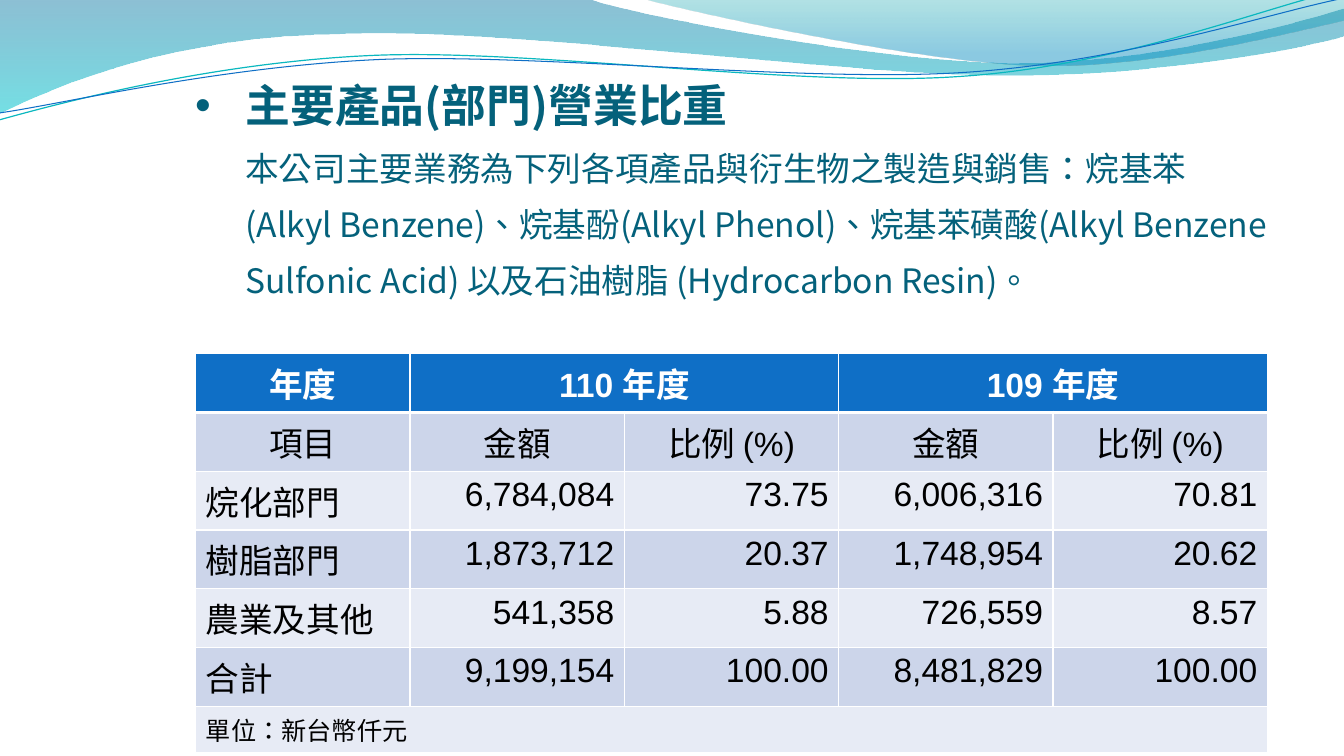
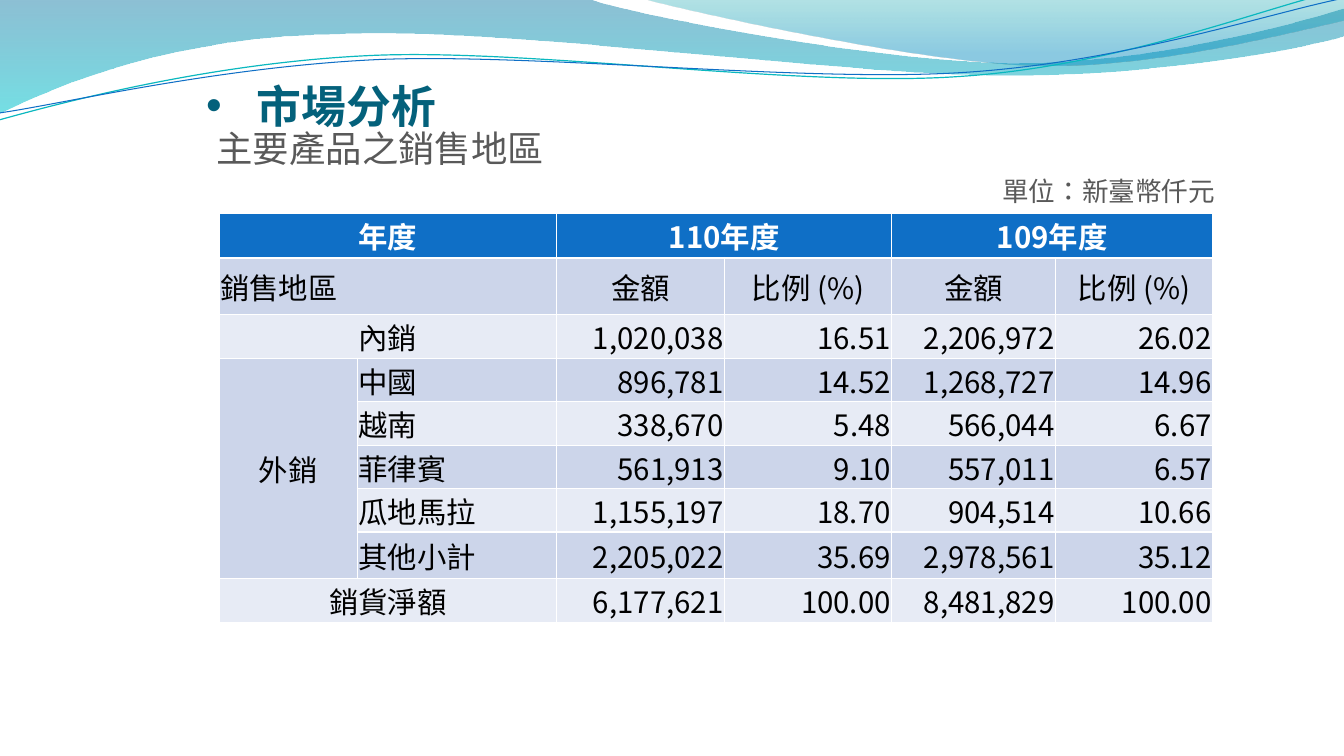
from lxml import etree
from pptx import Presentation
from pptx.dml.color import RGBColor
from pptx.enum.text import MSO_ANCHOR, PP_ALIGN
from pptx.oxml.ns import qn
from pptx.util import Pt

LEFT, CENTER, RIGHT = PP_ALIGN.LEFT, PP_ALIGN.CENTER, PP_ALIGN.RIGHT
TOP, MIDDLE = MSO_ANCHOR.TOP, MSO_ANCHOR.MIDDLE

COLORS = {
    "title": "04617B", "body": "595959", "black": "000000", "white": "FFFFFF",
    "header": "0F6FC6", "band_dark": "CCD5EA", "band_light": "E7EBF5",
    "wave_blue": "0074A1", "wave_cyan": "00C6CF",
    "crest_teal": "00A1A9", "crest_blue": "008BBF",
    "line_teal": "0AB8BF", "line_blue": "0F6FC6",
}
CJK = "Noto Sans CJK SC"
INCH = 72
CENTERED_LABELS = {"項目", "金額", "比例 (%)", "內銷", "外銷", "銷貨淨額"}

WAVE = [
    (0, 0), (5.87, 0),
    (6.34, 0.17, 8.85, 0.63, 10.11, 0.63), (11.38, 0.63, 12.78, 0.26, 13.33, 0.09),
    (13.35, 0.36),
    (13.11, 0.44, 11.6, 0.76, 9.94, 0.75), (8.29, 0.75, 5.09, 0.28, 3.43, 0.34),
    (1.72, 0.36, 0.61, 0.83, -0.01, 1.13),
]
CREST = [
    (6.39, 0),
    (6.79, 0.11, 9.09, 0.62, 10.25, 0.65), (11.41, 0.69, 12.82, 0.32, 13.33, 0.21),
    (13.33, 0),
]
TEAL_LINE = [
    (-0.01, 1.19), (0.64, 1.01, 2.11, 0.62, 3.69, 0.55),
    (5.27, 0.48, 7.9, 0.87, 9.5, 0.76), (11.1, 0.66, 12.52, 0.08, 13.31, -0.1),
]
BLUE_LINE = [
    (0, 1.12), (0.63, 1.03, 2.18, 0.66, 3.78, 0.59),
    (5.37, 0.53, 7.96, 0.82, 9.55, 0.72), (11.15, 0.62, 12.55, 0.14, 13.34, -0.02),
]

PRODUCT_ROWS = [
    ["年度", "110 年度", None, "109 年度", None],
    ["項目", "金額", "比例 (%)", "金額", "比例 (%)"],
    ["烷化部門", "6,784,084", "73.75", "6,006,316", "70.81"],
    ["樹脂部門", "1,873,712", "20.37", "1,748,954", "20.62"],
    ["農業及其他", "541,358", "5.88", "726,559", "8.57"],
    ["合計", "9,199,154", "100.00", "8,481,829", "100.00"],
    ["單位：新台幣仟元", None, None, None, None],
]
REGION_ROWS = [
    ["年度", None, "110年度", None, "109年度", None],
    ["銷售地區", None, "金額", "比例 (%)", "金額", "比例 (%)"],
    ["內銷", None, "1,020,038", "16.51", "2,206,972", "26.02"],
    ["外銷", "中國", "896,781", "14.52", "1,268,727", "14.96"],
    [None, "越南", "338,670", "5.48", "566,044", "6.67"],
    [None, "菲律賓", "561,913", "9.10", "557,011", "6.57"],
    [None, "瓜地馬拉", "1,155,197", "18.70", "904,514", "10.66"],
    [None, "其他小計", "2,205,022", "35.69", "2,978,561", "35.12"],
    ["銷貨淨額", None, "6,177,621", "100.00", "8,481,829", "100.00"],
]


def rgb(name):
    return RGBColor.from_string(COLORS[name])


def to_points(numbers):
    return [(Pt(x * INCH), Pt(y * INCH)) for x, y in zip(numbers[::2], numbers[1::2])]


def add_outline(slide, segments, close):
    start, *anchors = [to_points(segment)[-1] for segment in segments]
    builder = slide.shapes.build_freeform(*start)
    builder.add_line_segments(anchors, close=False)
    outline = builder.convert_to_shape()
    outline.shadow.inherit = False
    drawing = next(outline.element.iter(qn("a:path")))
    for straight, segment in zip(drawing.findall(qn("a:lnTo")), segments[1:]):
        if len(segment) == 6:
            curve = etree.Element(qn("a:cubicBezTo"))
            for x, y in to_points(segment):
                etree.SubElement(curve, qn("a:pt"), x=str(x - outline.left),
                                 y=str(y - outline.top))
            drawing.replace(straight, curve)
    if close:
        etree.SubElement(drawing, qn("a:close"))
    return outline


def add_wave(slide, segments, stops):
    wave = add_outline(slide, segments, True)
    wave.line.fill.background()
    wave.fill.gradient()
    wave.fill.gradient_angle = 270
    for stop, (position, color, _) in zip(wave.fill.gradient_stops, stops):
        stop.position = position
        stop.color.rgb = rgb(color)
    for node, (_, _, opacity) in zip(wave.element.spPr.iter(qn("a:srgbClr")), stops):
        etree.SubElement(node, qn("a:alpha"), val=str(opacity * 1000))


def add_curve(slide, segments, color, width):
    curve = add_outline(slide, segments, False)
    curve.fill.background()
    curve.line.color.rgb = rgb(color)
    curve.line.width = Pt(width)


def add_page(deck):
    slide = deck.slides.add_slide(deck.slide_layouts[6])
    add_wave(slide, WAVE, [(0, "wave_blue", 45), (1, "wave_cyan", 55)])
    add_wave(slide, CREST, [(0, "crest_teal", 30), (0.8, "crest_blue", 45)])
    add_curve(slide, TEAL_LINE, "line_teal", 0.85)
    add_curve(slide, BLUE_LINE, "line_blue", 0.75)
    return slide


def add_run(paragraph, text, size, color, bold=False, font=CJK):
    run = paragraph.add_run()
    run.text = text
    run.font.size = Pt(size)
    run.font.bold = bold
    run.font.color.rgb = rgb(color)
    run.font.name = font
    properties = run._r.get_or_add_rPr()
    properties.set("lang", "en-US")
    properties.set("altLang", "zh-TW")
    if any(mark in text for mark in "：、。"):
        properties.set("lang", "zh-TW")
    etree.SubElement(properties, qn("a:ea"), typeface=CJK)


def set_insets(holder, left, top, right, bottom):
    holder.margin_left, holder.margin_top = Pt(left), Pt(top)
    holder.margin_right, holder.margin_bottom = Pt(right), Pt(bottom)


def add_text_frame(slide, box, insets):
    frame = slide.shapes.add_textbox(*map(Pt, box)).text_frame
    frame.word_wrap = True
    frame.vertical_anchor = MIDDLE
    set_insets(frame, *insets)
    return frame


def add_title(slide, box, title):
    paragraph = add_text_frame(slide, box, (0, 3.6, 0, 0)).paragraphs[0]
    properties = paragraph._p.get_or_add_pPr()
    properties.set("marL", str(Pt(36)))
    properties.set("indent", str(-Pt(36)))
    etree.SubElement(properties, qn("a:buFont"), typeface="Arial")
    etree.SubElement(properties, qn("a:buChar"), char="•")
    add_run(paragraph, title, 32, "title", True)
    return paragraph


def add_borders(cell, bottom):
    properties = cell._tc.get_or_add_tcPr()
    for side, width in (("L", 1), ("R", 1), ("T", 1), ("B", bottom)):
        border = etree.SubElement(properties, qn(f"a:ln{side}"), w=str(Pt(width)))
        fill = etree.SubElement(border, qn("a:solidFill"))
        etree.SubElement(fill, qn("a:srgbClr"), val=COLORS["white"])


def cell_alignment(row, text):
    if row == 0 or text in CENTERED_LABELS:
        return CENTER
    return RIGHT if text[0].isdigit() else LEFT


def add_data_table(slide, origin, widths, heights, rows, merges, size, font,
                   insets, anchor, header_rule, row_sizes):
    frame = slide.shapes.add_table(len(rows), len(widths), *map(Pt, origin),
                                   Pt(sum(widths)), Pt(sum(heights)))
    table = frame.table
    for column, width in zip(table.columns, widths):
        column.width = Pt(width)
    for r, (height, values) in enumerate(zip(heights, rows)):
        table.rows[r].height = Pt(height)
        band = "header" if r == 0 else "band_dark" if r % 2 else "band_light"
        for c, text in enumerate(values):
            cell = table.cell(r, c)
            set_insets(cell, *insets)
            cell.vertical_anchor = anchor
            add_borders(cell, header_rule if r == 0 else 1)
            cell.fill.solid()
            cell.fill.fore_color.rgb = rgb(band)
            if text:
                paragraph = cell.text_frame.paragraphs[0]
                paragraph.alignment = cell_alignment(r, text)
                add_run(paragraph, text, row_sizes.get(r, size),
                        "white" if r == 0 else "black", r == 0, font)
    for top, left, bottom, right in merges:
        table.cell(top, left).merge(table.cell(bottom, right))


def build_product_slide(deck):
    slide = add_page(deck)
    title = add_title(slide, (139.3, 12.2, 766.8, 240.5), "主要產品(部門)營業比重")
    title.line_spacing = Pt(40)
    title.space_before, title.space_after = Pt(24), Pt(18)
    title.add_line_break()
    add_run(title, "本公司主要業務為下列各項產品與衍生物之製造與銷售：烷基苯"
            "(Alkyl Benzene)、烷基酚(Alkyl Phenol)、烷基苯磺酸(Alkyl Benzene "
            "Sulfonic Acid) 以及石油樹脂 (Hydrocarbon Resin)。", 24, "title")
    add_data_table(slide, (139.8, 252.6), [153.1] * 5, [42] * 6 + [33.3], PRODUCT_ROWS,
                   [(0, 1, 0, 2), (0, 3, 0, 4), (6, 0, 6, 4)], 24, "Arial",
                   (7.2, 3.6, 7.2, 3.6), TOP, 3, {6: 18})


def build_region_slide(deck):
    slide = add_page(deck)
    add_title(slide, (147.3, 41.8, 721.4, 63.4), "市場分析")
    caption = add_text_frame(slide, (147.6, 86.6, 727.2, 68.4), (7.2, 3.6, 7.2, 3.6))
    lines = [("主要產品之銷售地區", 26, LEFT), ("單位：新臺幣仟元", 19, RIGHT)]
    for i, (text, size, alignment) in enumerate(lines):
        paragraph = caption.add_paragraph() if i else caption.paragraphs[0]
        paragraph.alignment = alignment
        paragraph.line_spacing = 0.9
        paragraph.space_before = Pt(5.2)
        add_run(paragraph, text, size, "body")
    label_merges = [(r, 0, r, 1) for r in (0, 1, 2, 8)]
    add_data_table(slide, (156.6, 152.6), [98.6, 142.4, 119.9, 119.5, 116.9, 112.3],
                   [31.5, 40.5, 31.5, 31, 31, 31, 31, 33, 31.5], REGION_ROWS,
                   label_merges + [(0, 2, 0, 3), (0, 4, 0, 5), (3, 0, 7, 0)], 21, CJK,
                   (0.7, 0.7, 0.7, 0), MIDDLE, 1.5, {})


def main():
    deck = Presentation()
    deck.slide_width, deck.slide_height = Pt(960), Pt(540)
    build_product_slide(deck)
    build_region_slide(deck)
    deck.save("out.pptx")


if __name__ == "__main__":
    main()
